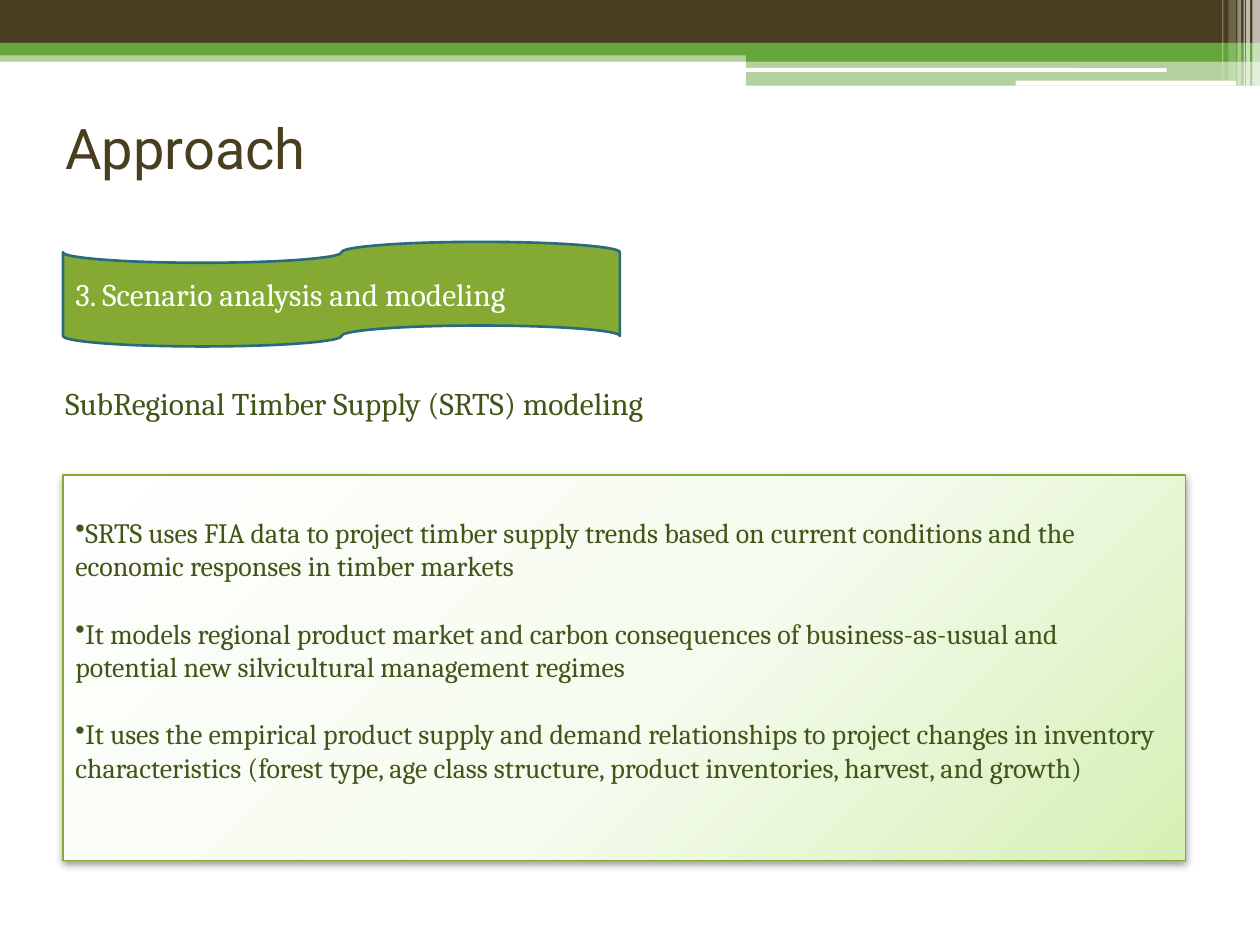
import pptx
import pptx.util
import pptx.dml.color
import pptx.enum.shapes
import pptx.enum.text
import pptx.oxml
import pptx.oxml.ns
from lxml import etree

Inches = pptx.util.Inches
Pt = pptx.util.Pt
SHAPE = pptx.enum.shapes.MSO_SHAPE
ANCHOR = pptx.enum.text.MSO_ANCHOR
ALIGN = pptx.enum.text.PP_ALIGN

BROWN, GREEN, WHITE = "4A3E21", "66A53B", "FFFFFF"
OLIVE, DARK_GREEN, TEAL = "84AA33", "425519", "296B7C"
NAMESPACE = pptx.oxml.ns.nsdecls("a")

POINTS = [
    ["SRTS uses FIA data to project timber supply trends based on current "
     "conditions and the economic responses in timber markets"],
    ["It models regional product market and carbon consequences of "
     "business-as-usual and",
     "potential new silvicultural management regimes"],
    ["It uses the empirical product supply and demand relationships to project "
     "changes in inventory characteristics (forest type, age class structure, "
     "product inventories, harvest, and growth)"],
]


def color(value):
    return pptx.dml.color.RGBColor.from_string(value)


def add_block(page, kind, left, top, width, height, fill, opacity=100):
    box = page.shapes.add_shape(kind, Inches(left), Inches(top), Inches(width), Inches(height))
    box.shadow.inherit = False
    box.line.fill.background()
    box.fill.solid()
    box.fill.fore_color.rgb = color(fill)
    if opacity < 100:
        tint = box.fill._xPr.find(".//" + pptx.oxml.ns.qn("a:srgbClr"))
        etree.SubElement(tint, pptx.oxml.ns.qn("a:alpha"), val=str(opacity * 1000))
    return box


def set_outline(box, value, width):
    box.line.color.rgb = color(value)
    box.line.width = Pt(width)


def add_span(para, text, size, font, value):
    para.alignment = ALIGN.LEFT
    span = para.add_run()
    span.text = text
    span.font.size = Pt(size)
    span.font.name = font
    span.font.color.rgb = color(value)


def add_label(page, left, top, width, height, text, size, font, value, anchor):
    box = page.shapes.add_textbox(Inches(left), Inches(top), Inches(width), Inches(height))
    frame = box.text_frame
    frame.word_wrap = True
    frame.vertical_anchor = anchor
    add_span(frame.paragraphs[0], text, size, font, value)


def add_header(page, left, top, width):
    # Full-width bands
    for offset, height, fill, opacity in [(0.4, 0.09, GREEN, 50), (0, 0.34, BROWN, 100),
                                          (0.34, 0.1, GREEN, 100)]:
        add_block(page, SHAPE.RECTANGLE, left, top + offset, width, height, fill, opacity)
    # Deeper bands on the right
    for offset, height, opacity in [(0.39, 0.1, 100), (0.48, 0.2, 50)]:
        add_block(page, SHAPE.RECTANGLE, left + 5.92, top + offset, width - 5.92, height,
                  GREEN, opacity)
    # White rules
    for x, y, length, height in [(5.91, 0.54, 3.35, 0.03), (8.06, 0.64, 1.75, 0.04)]:
        add_block(page, SHAPE.ROUNDED_RECTANGLE, left + x, top + y, length, height, WHITE)
    # Translucent stripes at the right edge
    for x, stripe, height, opacity in [(9.94, 0.06, 0.68, 65), (9.89, 0.03, 0.68, 65),
                                       (9.87, 0.01, 0.68, 60), (9.82, 0.03, 0.68, 40),
                                       (9.75, 0.06, 0.64, 20), (9.7, 0.01, 0.64, 30)]:
        add_block(page, SHAPE.RECTANGLE, left + x, top, stripe, height, WHITE, opacity)


def add_banner(page, left, top, width, height):
    box = add_block(page, SHAPE.FLOWCHART_PUNCHED_TAPE, left, top, width, height, OLIVE)
    set_outline(box, TEAL, 1.5)
    box.text_frame.vertical_anchor = ANCHOR.MIDDLE
    add_span(box.text_frame.paragraphs[0], "3. Scenario analysis and modeling",
             18, "Cambria", WHITE)


def style_panel(box):
    # Radial gradient centred beyond the top left corner
    stops = "".join(f'<a:gs pos="{place * 1000}"><a:srgbClr val="{value}"/></a:gs>'
                    for place, value in [(0, "FEFFFE"), (55, "F5FBEE"), (100, "D5F0B5")])
    gradient = pptx.oxml.parse_xml(
        f'<a:gradFill {NAMESPACE} rotWithShape="1"><a:gsLst>{stops}</a:gsLst>'
        '<a:path path="circle"><a:fillToRect l="-40000" t="-90000" r="140000" b="190000"/>'
        '</a:path></a:gradFill>')
    properties = box._element.spPr
    properties.replace(properties.find(pptx.oxml.ns.qn("a:solidFill")), gradient)
    # Soft shadow below
    properties.find(pptx.oxml.ns.qn("a:effectLst")).append(pptx.oxml.parse_xml(
        f'<a:outerShdw {NAMESPACE} blurRad="{Pt(4.1)}" dist="{Pt(2)}" dir="5400000" '
        'rotWithShape="0"><a:srgbClr val="000000"><a:alpha val="40000"/></a:srgbClr>'
        '</a:outerShdw>'))


def add_panel(page, left, top, width, height):
    box = add_block(page, SHAPE.RECTANGLE, left, top, width, height, WHITE)
    set_outline(box, OLIVE, 0.75)
    style_panel(box)
    frame = box.text_frame
    frame.vertical_anchor = ANCHOR.TOP
    frame.margin_top = Inches(0.32)
    for index, lines in enumerate(POINTS):
        para = frame.add_paragraph() if index else frame.paragraphs[0]
        if index:
            para.space_before = Pt(19.2)
        bullet = etree.SubElement(para._p.get_or_add_pPr(), pptx.oxml.ns.qn("a:buChar"))
        bullet.set("char", "•")
        for number, line in enumerate(lines):
            if number:
                para.add_line_break()
            add_span(para, line, 16, "Cambria", DARK_GREEN)


def main():
    deck = pptx.Presentation()
    deck.slide_width, deck.slide_height = Inches(10), Inches(7.5)
    page = deck.slides.add_slide(deck.slide_layouts[6])
    add_header(page, 0, 0, 10)
    add_label(page, 0.42, 3, 8.17, 0.4, "SubRegional Timber Supply (SRTS) modeling",
              18, "Cambria", DARK_GREEN, ANCHOR.TOP)
    add_panel(page, 0.5, 3.77, 8.91, 3.06)
    add_label(page, 0.42, 0.58, 9, 1.17, "Approach", 32, "Roboto", BROWN, ANCHOR.MIDDLE)
    add_banner(page, 0.5, 1.92, 4.42, 0.83)
    deck.save("out.pptx")


if __name__ == "__main__":
    main()
